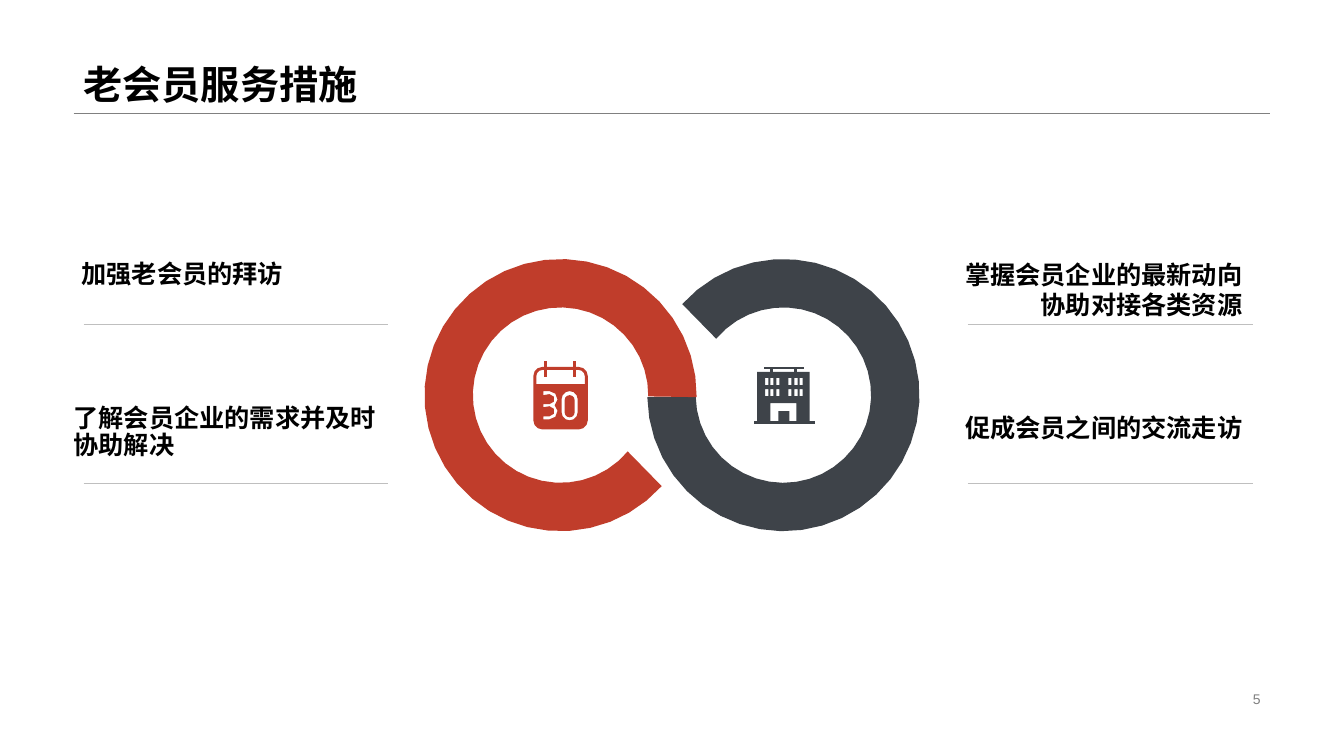
from dataclasses import dataclass
from math import cos, radians, sin

from lxml import etree
from pptx import Presentation
from pptx.dml.color import RGBColor
from pptx.enum.shapes import MSO_CONNECTOR
from pptx.enum.text import MSO_ANCHOR, PP_ALIGN
from pptx.oxml.ns import qn
from pptx.util import Inches, Pt

LEFT, RIGHT = PP_ALIGN.LEFT, PP_ALIGN.RIGHT
BOTTOM, MIDDLE = MSO_ANCHOR.BOTTOM, MSO_ANCHOR.MIDDLE
STRAIGHT = MSO_CONNECTOR.STRAIGHT
BLANK_LAYOUT = 6


@dataclass(frozen=True)
class Theme:
    font: str = "Arial"
    text: str = "000000"
    muted: str = "808080"
    rule: str = "BFBFBF"
    red: str = "C03D2B"
    dark: str = "3E4349"
    title_size: float = 28
    label_size: float = 18
    number_size: float = 10
    rule_width: float = 0.25


THEME = Theme()

# Content
TITLE = "老会员服务措施"
PAGE_NUMBER = "5"
# Lines, box (left, top, width, height), alignment, line spacing
LABELS = [
    (["加强老会员的拜访"], (0.71, 2.49, 3.39, 0.42), LEFT, 1.0),
    (["了解会员企业的需求并及时", "协助解决"], (0.63, 3.95, 3.37, 0.66), LEFT, 0.9),
    (["掌握会员企业的最新动向", "协助对接各类资源"], (9.25, 2.02, 3.17, 1.2), RIGHT, 1.0),
    (["促成会员之间的交流走访"], (9.25, 4.02, 3.17, 0.42), RIGHT, 1.0),
]
LABEL_RULES_X = [(0.83, 3.85), (9.6, 12.43)]
LABEL_RULES_Y = [3.22, 4.79]

# Rings: centre x, rotation, angle where the two rings join, colour
RING_Y, OUTER_RADIUS, INNER_RADIUS = 3.92, 1.35, 0.87
OUTER_CUT, INNER_CUT, RING_STEPS = 42, 40, 36
RINGS = [(7.77, 180, 359.15, THEME.dark), (5.56, 0, 360.85, THEME.red)]

presentation = Presentation()
presentation.slide_width = Inches(13.33)
presentation.slide_height = Inches(7.5)
slide = presentation.slides.add_slide(presentation.slide_layouts[BLANK_LAYOUT])


def add_text(lines, box, size, color=THEME.text, bold=True, align=LEFT,
             anchor=BOTTOM, spacing=1.0, wrap=False):
    frame = slide.shapes.add_textbox(*map(Inches, box)).text_frame
    frame.word_wrap = wrap
    frame.vertical_anchor = anchor
    frame.text = "\n".join(lines)
    for paragraph in frame.paragraphs:
        paragraph.alignment = align
        paragraph.line_spacing = spacing
        for run in paragraph.runs:
            run.font.name = THEME.font
            run.font.size = Pt(size)
            run.font.bold = bold
            run.font.color.rgb = RGBColor.from_string(color)


def add_rule(left, right, y, color):
    rule = slide.shapes.add_connector(
        STRAIGHT, Inches(left), Inches(y), Inches(right), Inches(y))
    rule.line.color.rgb = RGBColor.from_string(color)
    rule.line.width = Pt(THEME.rule_width)
    etree.SubElement(rule.element.spPr, qn("a:effectLst"))


def arc(x, y, radius, start, end, steps=3):
    angles = [radians(start + (end - start) * i / steps) for i in range(steps + 1)]
    return [(x + radius * cos(a), y + radius * sin(a)) for a in angles]


def rectangle(left, top, width, height):
    right, bottom = left + width, top + height
    return [(right, bottom), (left, bottom), (left, top), (right, top)]


def rounded(left, top, width, height, radius):
    """Outline of a rectangle with rounded corners."""
    centers = rectangle(left + radius, top + radius,
                        width - 2 * radius, height - 2 * radius)
    return [point for i, (x, y) in enumerate(centers)
            for point in arc(x, y, radius, 90 * i, 90 * i + 90)]


def add_outline(contours, color):
    """One filled shape; a contour inside another one is a hole."""
    builder = None
    for contour in contours:
        points = [(Inches(x), Inches(y)) for x, y in contour]
        if builder is None:
            builder = slide.shapes.build_freeform(*points[0])
        else:
            builder.move_to(*points[0])
        builder.add_line_segments(points[1:], close=True)
    shape = builder.convert_to_shape()
    shape.shadow.inherit = False
    shape.fill.solid()
    shape.fill.fore_color.rgb = RGBColor.from_string(color)
    shape.line.fill.background()


# Title and page number
add_rule(0.73, 12.6, 1.12, THEME.muted)
add_text([TITLE], (0.73, 0, 11.87, 1.12), THEME.title_size, spacing=0.9, wrap=True)
add_text([PAGE_NUMBER], (9.42, 6.82, 3.18, 0.23), THEME.number_size, THEME.muted,
         bold=False, align=RIGHT, anchor=MIDDLE, wrap=True)

# Interlocking rings
for x, turn, join, color in RINGS:
    outer = arc(x, RING_Y, OUTER_RADIUS, turn + OUTER_CUT, turn + join, RING_STEPS)
    inner = arc(x, RING_Y, INNER_RADIUS, turn + join, turn + INNER_CUT, RING_STEPS)
    add_outline([outer + inner], color)

# Calendar icon: page with the number 30, then two binding posts
three = [(5.39, 3.88), *arc(5.45, 3.96, 0.08, -90, 50), *arc(5.45, 4.08, 0.08, -50, 90),
         (5.39, 4.16), (5.39, 4.13), *arc(5.45, 4.08, 0.05, 90, -90),
         (5.39, 4.04), (5.39, 4.01), *arc(5.45, 3.96, 0.05, 90, -90), (5.39, 3.92)]
add_outline([
    rounded(5.29, 3.64, 0.54, 0.62, 0.09),
    [(5.32, 3.81), *arc(5.38, 3.73, 0.06, 180, 270), *arc(5.74, 3.73, 0.06, 270, 360),
     (5.8, 3.81)],
    three,
    rounded(5.57, 3.88, 0.16, 0.29, 0.08),
    rounded(5.6, 3.92, 0.1, 0.22, 0.05),
], THEME.red)
for x in (5.4, 5.68):
    add_outline([rectangle(x, 3.58, 0.03, 0.16)], THEME.red)

# Building icon: walls with windows and door, then ground and roof frame
windows = [rectangle(x, y, 0.03, 0.07)
           for y in (3.75, 3.86) for x in (7.59, 7.64, 7.7, 7.82, 7.88, 7.93)]
add_outline([rectangle(7.51, 3.69, 0.52, 0.5), *windows,
             rectangle(7.64, 4, 0.26, 0.18),
             rectangle(7.72, 4.08, 0.11, 0.1)], THEME.dark)
for part in [(7.48, 4.18, 0.6, 0.03), (7.58, 3.64, 0.39, 0.02),
             (7.64, 3.65, 0.03, 0.05), (7.88, 3.65, 0.03, 0.05)]:
    add_outline([rectangle(*part)], THEME.dark)

# Labels and the rules below them
for lines, box, align, spacing in LABELS:
    add_text(lines, box, THEME.label_size, align=align, spacing=spacing)
for left, right in LABEL_RULES_X:
    for y in LABEL_RULES_Y:
        add_rule(left, right, y, THEME.rule)

presentation.save("out.pptx")
